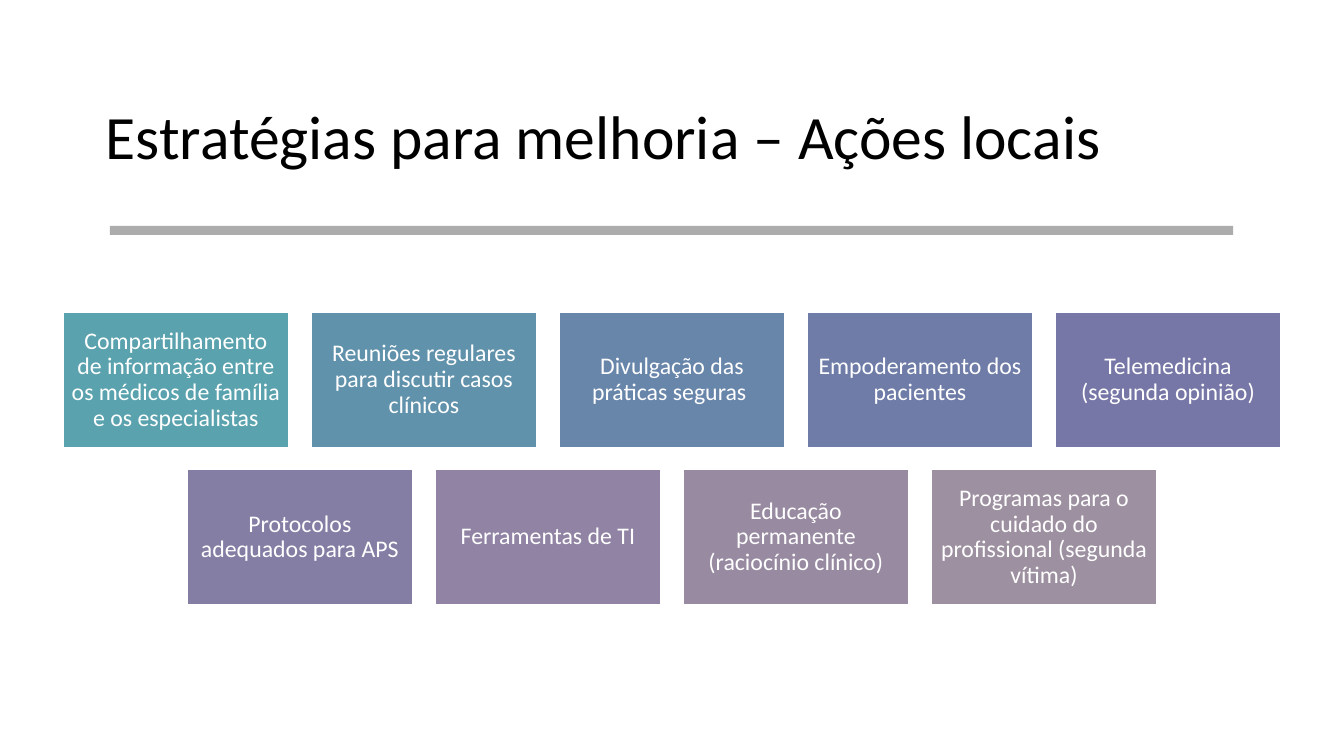
from lxml import etree
from pptx import Presentation
from pptx.dml.color import RGBColor
from pptx.enum.shapes import MSO_SHAPE
from pptx.enum.text import MSO_ANCHOR, PP_ALIGN
from pptx.oxml.ns import qn
from pptx.util import Inches, Pt

RECTANGLE = MSO_SHAPE.RECTANGLE
MIDDLE = MSO_ANCHOR.MIDDLE
LEFT, CENTER = PP_ALIGN.LEFT, PP_ALIGN.CENTER

FONT = "Calibri"
BOX_W, BOX_H = 2.23, 1.34
PITCH_X, PITCH_Y = 2.46, 1.56
GRID_LEFT, GRID_TOP = 0.63, 3.1

ACTION_ROWS = [
    [
        ("Compartilhamento de informação entre os médicos de família e os especialistas", "5AA2AE"),
        ("Reuniões regulares para discutir casos clínicos", "6192AC"),
        ("Divulgação das práticas seguras ", "6885AA"),
        ("Empoderamento dos pacientes", "6F7CA8"),
        ("Telemedicina (segunda opinião)", "7677A6"),
    ],
    [
        ("Protocolos adequados para APS", "847DA4"),
        ("Ferramentas de TI", "9083A3"),
        ("Educação permanente (raciocínio clínico)", "988AA1"),
        ("Programas para o cuidado do profissional (segunda vítima)", "9D90A0"),
    ],
]


def rgb(color):
    """Turn a hex string into a colour."""
    return RGBColor.from_string(color)


def set_text(sp, text, size, color, align):
    """Write one vertically centred paragraph into a shape."""
    tf = sp.text_frame
    tf.word_wrap = True
    tf.vertical_anchor = MIDDLE
    p = tf.paragraphs[0]
    p.text = text
    p.alignment = align
    p.line_spacing = 0.9
    font = p.runs[0].font
    font.name, font.size = FONT, Pt(size)
    font.color.rgb = rgb(color)


def add_rect(s, left, top, width, height, fill):
    """Add a filled rectangle without outline or shadow."""
    sp = s.shapes.add_shape(RECTANGLE, Inches(left), Inches(top), Inches(width), Inches(height))
    sp.shadow.inherit = False
    sp.fill.solid()
    sp.fill.fore_color.rgb = rgb(fill)
    sp.line.fill.background()
    return sp


def add_title(s, text):
    """Add the slide title."""
    sp = s.shapes.add_textbox(Inches(0.95), Inches(0.66), Inches(11.43), Inches(1.45))
    set_text(sp, text, 44, "000000", LEFT)


def add_divider(s):
    """Add the translucent grey bar below the title."""
    sp = add_rect(s, 1.09, 2.24, 11.14, 0.09, "808080")
    color = sp.fill._xPr.find(qn("a:solidFill"))[0]
    etree.SubElement(color, qn("a:alpha"), val="65000")


def add_action(s, left, top, text, fill):
    """Add one action box with a white outline."""
    sp = add_rect(s, left, top, BOX_W, BOX_H, fill)
    sp.line.color.rgb = rgb("FFFFFF")
    sp.line.width = Pt(1)
    tf = sp.text_frame
    tf.margin_left = tf.margin_right = tf.margin_top = tf.margin_bottom = Inches(0.07)
    set_text(sp, text, 17, "FFFFFF", CENTER)


def add_actions(s):
    """Add the rows of actions, each centred under the longest."""
    longest = max(len(row) for row in ACTION_ROWS)
    for i, row in enumerate(ACTION_ROWS):
        row_left = GRID_LEFT + (longest - len(row)) * PITCH_X / 2
        for j, (text, fill) in enumerate(row):
            add_action(s, row_left + j * PITCH_X, GRID_TOP + i * PITCH_Y, text, fill)


def main():
    """Build and save the slide."""
    prs = Presentation()
    prs.slide_width, prs.slide_height = Inches(13.33), Inches(7.5)
    s = prs.slides.add_slide(prs.slide_layouts[6])
    add_title(s, "Estratégias para melhoria – Ações locais")
    add_divider(s)
    add_actions(s)
    prs.save("out.pptx")


if __name__ == "__main__":
    main()
